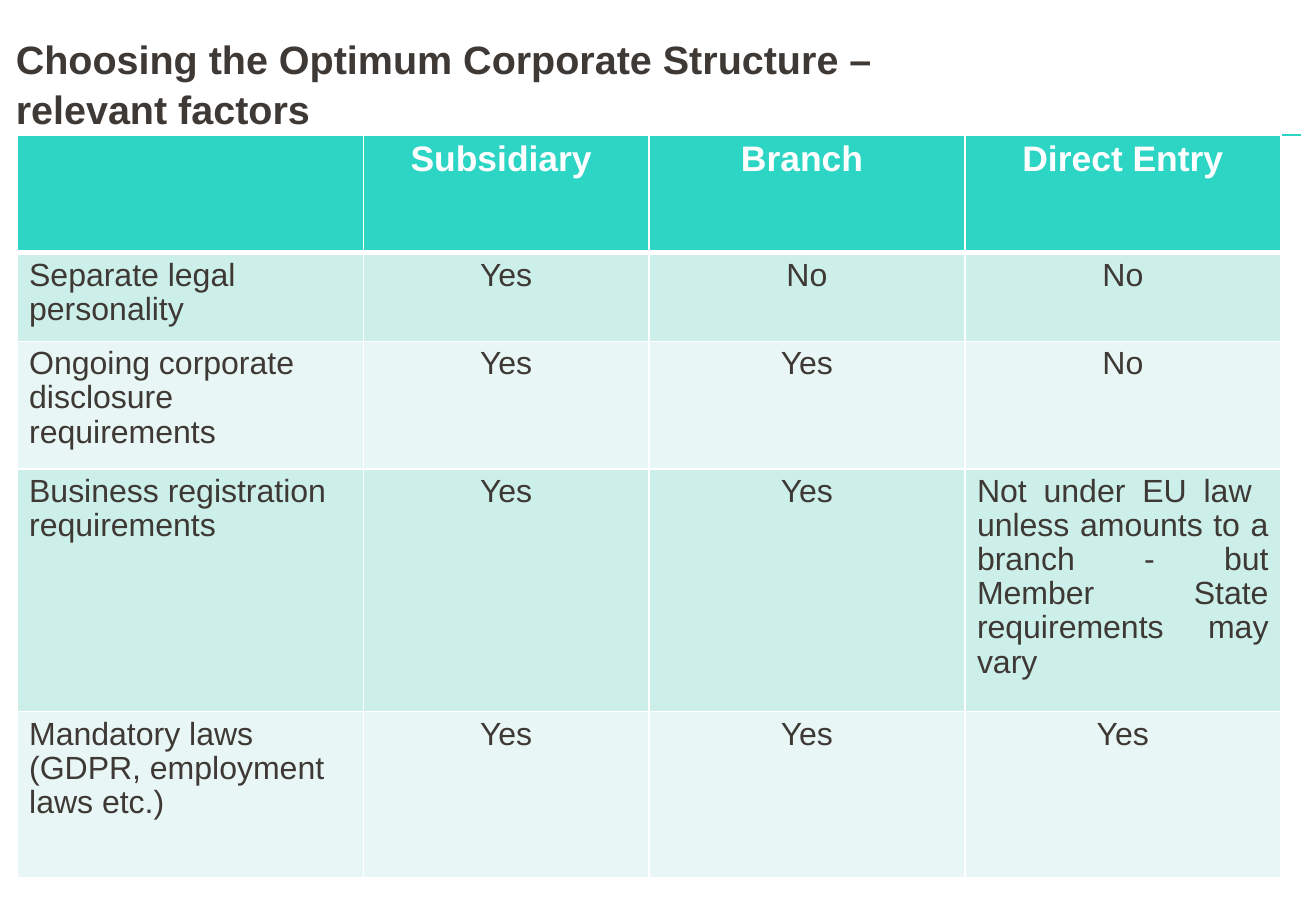
from lxml import etree
from pptx import Presentation
from pptx.dml.color import RGBColor
from pptx.enum.shapes import MSO_CONNECTOR
from pptx.enum.text import MSO_ANCHOR, PP_ALIGN
from pptx.oxml.ns import qn
from pptx.util import Pt

EMU_PER_PX = 9144
FONT = "Arial"
TEAL = RGBColor(0x2C, 0xD5, 0xC4)
PALE_TEAL = RGBColor(0xCD, 0xEF, 0xEA)
FAINT_TEAL = RGBColor(0xE8, 0xF7, 0xF5)
WHITE = RGBColor(0xFF, 0xFF, 0xFF)
CHARCOAL = RGBColor(0x3E, 0x39, 0x35)

STRAIGHT = MSO_CONNECTOR.STRAIGHT
MIDDLE = MSO_ANCHOR.MIDDLE
LEFT, CENTER, JUSTIFY = PP_ALIGN.LEFT, PP_ALIGN.CENTER, PP_ALIGN.JUSTIFY

TITLE = "Choosing the Optimum Corporate Structure – relevant factors"
COLUMN_WIDTHS = [285, 235, 260, 260]
ROW_HEIGHTS = [97, 73, 105, 200, 137]
FACTORS = [
    ["", "Subsidiary ", "Branch ", "Direct Entry"],
    ["Separate legal personality", "Yes", "No", "No"],
    ["Ongoing corporate disclosure requirements", "Yes", "Yes", "No"],
    ["Business registration requirements", "Yes", "Yes",
     "Not under EU law  unless amounts to a branch - but Member State requirements may vary"],
    ["Mandatory laws (GDPR, employment\nlaws etc.)", "Yes", "Yes", "Yes"],
]


def px(length):
    return length * EMU_PER_PX


def format_text(text_frame, size, color, bold, alignment, spacing):
    for paragraph in text_frame.paragraphs:
        paragraph.alignment = alignment
        paragraph.line_spacing = spacing
        paragraph.space_before = Pt(0)
        paragraph.font.size = Pt(size)
        for run in paragraph.runs:
            run.font.name = FONT
            run.font.size = Pt(size)
            run.font.bold = bold
            run.font.color.rgb = color


def set_title(slide):
    title = slide.shapes.title
    title.left, title.top, title.width, title.height = px(13), px(40), px(725), px(55)
    text_frame = title.text_frame
    text_frame.text = TITLE
    text_frame.word_wrap = True
    text_frame.vertical_anchor = MIDDLE
    text_frame.margin_left = text_frame.margin_right = 0
    text_frame.margin_top = text_frame.margin_bottom = 0
    format_text(text_frame, 23.4, CHARCOAL, True, LEFT, 1.06)


def add_rule(slide):
    rule = slide.shapes.add_connector(STRAIGHT, px(13), px(111), px(1071), px(111))
    rule.line.color.rgb = TEAL
    rule.line.width = Pt(1)
    etree.SubElement(rule._element.spPr, qn("a:effectLst"))


def set_borders(cell, widths):
    properties = cell._tc.get_or_add_tcPr()
    for position, (side, width) in enumerate(widths.items()):
        border = etree.Element(qn(f"a:{side}"), w=str(Pt(width)))
        fill = etree.SubElement(border, qn("a:solidFill"))
        etree.SubElement(fill, qn("a:srgbClr"), val=str(WHITE))
        properties.insert(position, border)


def fill_cell(cell, text, row, column):
    is_header = row == 0
    cell.fill.solid()
    cell.fill.fore_color.rgb = TEAL if is_header else PALE_TEAL if row % 2 else FAINT_TEAL
    cell.text_frame.text = text
    if column == 0:
        alignment = LEFT
    else:
        alignment = JUSTIFY if len(text) > 20 else CENTER
    format_text(cell.text_frame, 21 if is_header else 19, WHITE if is_header else CHARCOAL,
                is_header, alignment, 0.96)
    set_borders(cell, {"lnL": 1, "lnR": 1, "lnT": 3 if row == 1 else 1,
                       "lnB": 3 if is_header else 1})


def add_factor_table(slide):
    frame = slide.shapes.add_table(len(ROW_HEIGHTS), len(COLUMN_WIDTHS), px(14), px(111),
                                   px(sum(COLUMN_WIDTHS)), px(sum(ROW_HEIGHTS)))
    table = frame.table
    for column, width in zip(table.columns, COLUMN_WIDTHS):
        column.width = px(width)
    for row, height in zip(table.rows, ROW_HEIGHTS):
        row.height = px(height)
    for row, texts in enumerate(FACTORS):
        for column, text in enumerate(texts):
            fill_cell(table.cell(row, column), text, row, column)


def main():
    presentation = Presentation()
    presentation.slide_width, presentation.slide_height = px(1083), px(750)
    slide = presentation.slides.add_slide(presentation.slide_layouts[5])
    set_title(slide)
    add_rule(slide)
    add_factor_table(slide)
    presentation.save("out.pptx")


if __name__ == "__main__":
    main()
